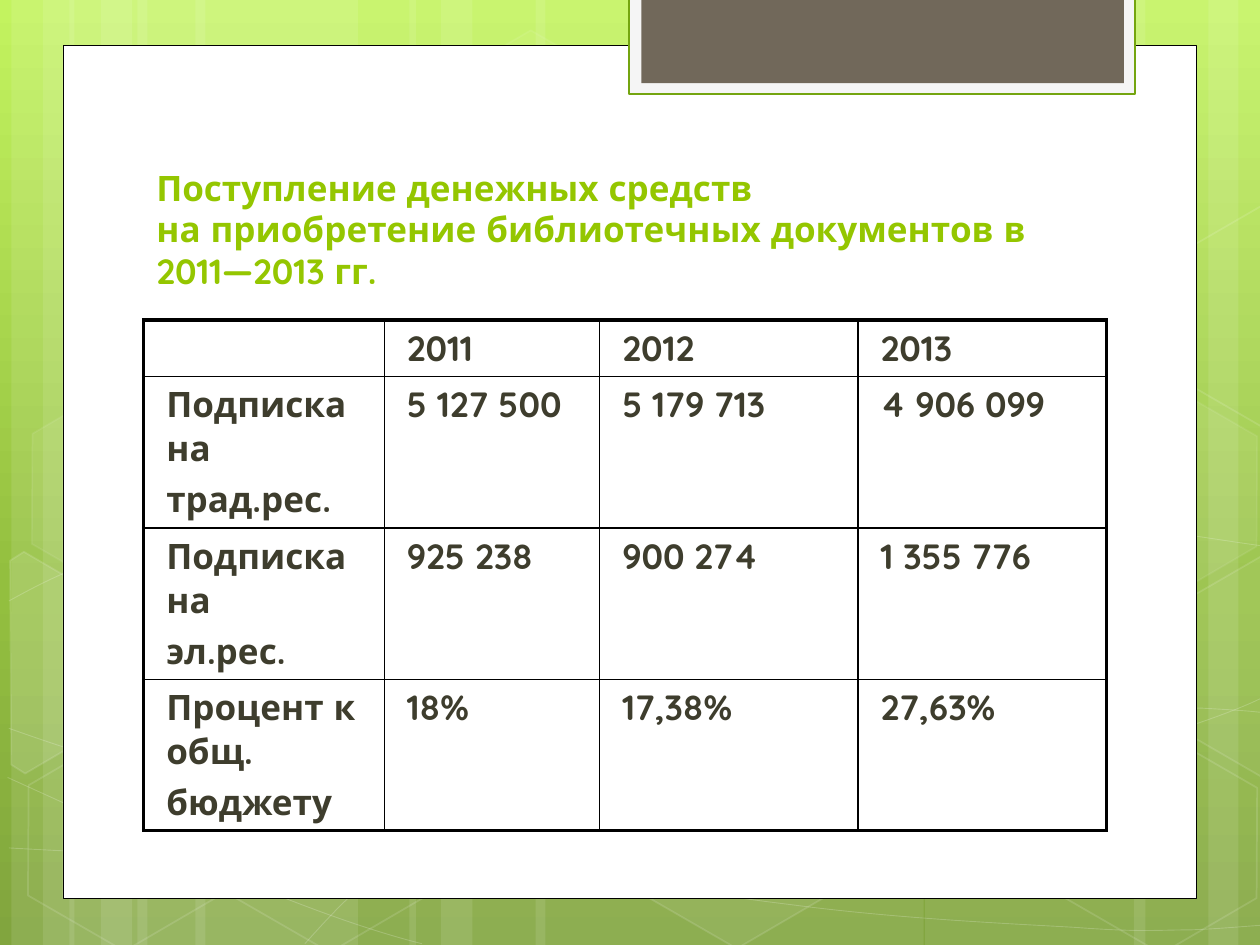
from copy import deepcopy
from dataclasses import dataclass

from lxml import etree
from pptx import Presentation, util as u
from pptx.dml.color import RGBColor
from pptx.enum import shapes, text
from pptx.oxml.ns import qn

COLUMNS, ROWS = 10, 7.5
CELL = u.Inches(10) // COLUMNS
FONT = "Quicksand"
WHITE, BLACK, GREEN, DARK = "FFFFFF", "000000", "94C600", "3E3D2D"
Point = tuple[float, float]


@dataclass
class Block:
    left: float
    top: float
    width: float
    height: float
    fill: str | None = None
    line: str | None = None
    weight: float = 1
    fill_alpha: int = 100
    line_alpha: int = 100
    turn: float = 0


@dataclass
class Hexagon:
    left: float
    top: float
    fill_alpha: int
    line_alpha: int


@dataclass
class Shard:
    points: list[Point]
    fill_alpha: int


BANDS = [(left + shift, width) for shift in (0, 0.46)
         for left, width in ((1.09, 1.75), (0.09, 0.5), (0.34, 0.83))]
BANDS += [(7.34, 1.75), (9.59, 0.5), (9, 0.83), (4.25, 3.08), (3.25, 0.5), (3.5, 0.83)]

CURVES = [
    [(0.07, 6.73), (0.61, 6.76), (1.15, 6.79), (1.9, 6.78), (2.65, 6.77), (3.58, 6.75),
     (4.58, 6.65), (5.58, 6.55), (7, 6.36), (7.92, 6.17), (8.83, 5.98), (9.77, 5.68), (10.07, 5.51)],
    [(0.07, 4.77), (0.36, 4.61), (0.65, 4.46), (1.21, 4.31), (1.78, 4.16), (2.59, 3.94),
     (3.47, 3.87), (4.36, 3.8), (5.44, 3.79), (6.54, 3.87), (7.64, 3.95), (9.47, 4.26), (10.07, 4.34)],
    [(0.06, 6.17), (1.27, 6.72), (2.47, 7.27), (3.35, 7.49)],
    [(0.07, 5.78), (0.38, 5.89), (0.7, 6), (1.28, 6.16), (1.86, 6.31), (2.73, 6.56),
     (3.57, 6.73), (4.4, 6.9), (5.45, 7.08), (6.28, 7.18), (7.11, 7.29), (8, 7.33),
     (8.53, 7.36), (9.06, 7.4), (9.19, 7.38), (9.45, 7.38), (9.71, 7.37), (9.89, 7.35), (10.07, 7.34)],
    [(2.42, 7.49), (2.6, 7.29), (2.78, 7.09), (3.02, 6.91), (3.26, 6.72), (3.6, 6.53),
     (3.88, 6.39), (4.16, 6.25), (4.33, 6.19), (4.69, 6.09), (5.06, 5.99), (5.73, 5.85),
     (6.08, 5.78), (6.44, 5.71), (6.49, 5.71), (6.8, 5.69), (7.11, 5.66), (7.6, 5.63),
     (7.94, 5.62), (8.29, 5.61), (8.86, 5.62), (8.86, 5.62), (8.86, 5.62), (9.53, 5.62),
     (9.53, 5.62), (9.71, 5.63), (9.88, 5.64), (9.97, 5.65), (10.06, 5.66), (10.03, 5.65), (10.06, 5.66)],
]

HEXAGONS = [
    Hexagon(3.34, 0.36, 4, 8), Hexagon(4.97, 5.89, 6, 12), Hexagon(0.11, 5.91, 0, 12),
    Hexagon(0.14, 3.12, 7, 8), Hexagon(1.74, 5.92, 0, 12), Hexagon(7.53, 4.53, 10, 12),
    Hexagon(8.34, 5.93, 0, 12), Hexagon(8.34, 3.14, 7, 8),
]

SHARDS = [
    Shard([(0.08, 4.45), (0.19, 4.38), (0.96, 4.83), (0.95, 5.7), (0.2, 6.14), (0.09, 6.07)], 10),
    Shard([(9.26, 4.85), (10.02, 4.41), (10.09, 4.46), (10.09, 6.13), (10.02, 6.17), (9.26, 5.73)], 4),
    Shard([(9.26, 2.07), (10.02, 1.63), (10.1, 1.68), (10.09, 3.35), (10.02, 3.39), (9.26, 2.95)], 0),
]

PANELS = [
    Block(0.5, 0.36, 9, 6.77, WHITE, BLACK, 0.5),
    Block(4.99, -0.02, 4.02, 0.77, "F5F5F5", "74A510", 1.25),
    Block(5.09, -0.02, 3.83, 0.68, "71685A"),
]

TITLE = "Поступление денежных средств \vна приобретение библиотечных документов в 2011—2013 гг."
BUDGET = [
    ["", "2011", "2012", "2013"],
    ["Подписка на\nтрад.рес.", "5 127 500", "5 179 713", "4 906 099"],
    ["Подписка на\nэл.рес.", "925 238", "900 274", "1 355 776"],
    ["Процент к общ.\nбюджету", "18%", "17,38%", "27,63%"],
]
COLUMN_WIDTHS = [1.91, 1.71, 2.05, 1.97]
ROW_HEIGHTS = [0.43, 0.98, 0.98, 0.92]


def cells(count: float) -> u.Emu:
    return u.Emu(round(count * CELL))


def colour(value: str) -> RGBColor:
    return RGBColor.from_string(value)


def paint(fill, value: str | None, alpha: int = 100) -> None:
    if value is None or alpha == 0:
        fill.background()
        return
    fill.solid()
    fill.fore_color.rgb = colour(value)


def fade(shape, tag: str, alpha: int) -> None:
    owner = shape.element.spPr if tag == "fill" else shape.element.spPr.find(qn("a:ln"))
    tone = owner.find(f"{qn('a:solidFill')}/{qn('a:srgbClr')}")
    if tone is not None and alpha < 100:
        etree.SubElement(tone, qn("a:alpha")).set("val", str(alpha * 1000))


def dress(shape, fill: str | None, line: str | None, weight: float,
          fill_alpha: int = 100, line_alpha: int = 100) -> None:
    shape.shadow.inherit = False
    paint(shape.fill, fill, fill_alpha)
    paint(shape.line.fill, line, line_alpha)
    fade(shape, "fill", fill_alpha)
    if line:
        shape.line.width = u.Pt(weight)
        fade(shape, "line", line_alpha)


def draw_block(page, block: Block, kind=shapes.MSO_SHAPE.RECTANGLE):
    shape = page.shapes.add_shape(kind, *map(cells, (block.left, block.top, block.width, block.height)))
    shape.rotation = block.turn
    dress(shape, block.fill, block.line, block.weight, block.fill_alpha, block.line_alpha)
    return shape


def draw_hexagon(page, item: Hexagon) -> None:
    block = Block(item.left, item.top, 1.75, 1.52, WHITE, WHITE, 1, item.fill_alpha, item.line_alpha, 30)
    draw_block(page, block, shapes.MSO_SHAPE.HEXAGON).adjustments[0] = 0.285


def draw_outline(page, points: list[Point], closed: bool):
    first, *rest = [(cells(x), cells(y)) for x, y in points]
    builder = page.shapes.build_freeform(*first)
    builder.add_line_segments(rest, close=closed)
    return builder.convert_to_shape()


def draw_curve(page, points: list[Point]) -> None:
    shape = draw_outline(page, points, False)
    outline = next(shape.element.iter(qn("a:path")))
    lines = outline.findall(qn("a:lnTo"))
    for start in range(0, len(lines), 3):
        group = lines[start:start + 3]
        for line in group:
            outline.remove(line)
        if points[start] == points[start + 1] and points[start + 2] == points[start + 3]:
            outline.append(group[-1])
        else:
            bend = etree.SubElement(outline, qn("a:cubicBezTo"))
            bend.extend([line[0] for line in group])
    dress(shape, None, WHITE, 0.5, line_alpha=20)


def write(para, words: str, *, tone: str, size: float = 20, before: float = 0,
          spacing: float | None = None, indent: float = 0) -> None:
    para.text = words
    para.alignment = text.PP_ALIGN.LEFT
    para.space_before = u.Pt(before)
    para.line_spacing = spacing
    para._p.get_or_add_pPr().set("marL", str(cells(indent)))
    for span in para.runs:
        span.font.name, span.font.size, span.font.bold = FONT, u.Pt(size), True
        span.font.color.rgb = colour(tone)
    for gap in para._p.findall(qn("a:br")):
        gap.insert(0, deepcopy(para.runs[0].font._rPr))


def set_background(page) -> None:
    fill = page.background.fill
    fill.gradient()
    fill.gradient_angle = 270
    stops = next(page.element.iter(qn("a:gsLst")))
    stops.append(deepcopy(stops[-1]))
    for stop, (place, tone) in zip(fill.gradient_stops, [(0, "C3F35F"), (0.62, "93BF3F"), (1, "81A53E")]):
        stop.position = place
        stop.color.rgb = colour(tone)


def set_borders(cell, weights: dict[str, float]) -> None:
    props = cell._tc.get_or_add_tcPr()
    for index, (side, weight) in enumerate(weights.items()):
        line = etree.Element(qn(f"a:ln{side}"), w=str(u.Pt(weight)))
        tone = etree.SubElement(etree.SubElement(line, qn("a:solidFill")), qn("a:srgbClr"))
        tone.set("val", BLACK)
        props.insert(index, line)


def draw_table(page) -> None:
    last_row, last_column = len(BUDGET) - 1, len(COLUMN_WIDTHS) - 1
    frame = page.shapes.add_table(len(BUDGET), len(COLUMN_WIDTHS), *map(cells, (1.14, 2.54, 7.64, 3.93)))
    table = frame.table
    table.first_row = table.horz_banding = False
    for column, width in zip(table.columns, COLUMN_WIDTHS):
        column.width = cells(width)
    for r, (row, height) in enumerate(zip(table.rows, ROW_HEIGHTS)):
        row.height = cells(height)
        for c, cell in enumerate(row.cells):
            cell.fill.background()
            edges = {"L": c == 0, "R": c == last_column, "T": r == 0, "B": r == last_row}
            set_borders(cell, {side: 2.25 if outer else 1 for side, outer in edges.items()})
            for index, words in enumerate(BUDGET[r][c].split("\n")):
                para = cell.text_frame.add_paragraph() if index else cell.text_frame.paragraphs[0]
                write(para, words, tone=DARK, before=4, indent=0.08)
    frame.height = cells(3.93)


def place_title(page) -> None:
    title = page.shapes.title
    title.element.getparent().append(title.element)
    title.left, title.top, title.width, title.height = map(cells, (1.14, 1.12, 7.68, 1.25))
    box = title.text_frame
    box.word_wrap, box.auto_size = True, text.MSO_AUTO_SIZE.NONE
    box.vertical_anchor = text.MSO_ANCHOR.BOTTOM
    write(box.paragraphs[0], TITLE, tone=GREEN, spacing=0.98)


def main() -> None:
    deck = Presentation()
    deck.slide_width, deck.slide_height = cells(COLUMNS), cells(ROWS)
    page = deck.slides.add_slide(deck.slide_layouts[5])
    set_background(page)
    for left, width in BANDS:
        draw_block(page, Block(left, 0, width, ROWS, WHITE, fill_alpha=10))
    for curve in CURVES:
        draw_curve(page, curve)
    for item in HEXAGONS:
        draw_hexagon(page, item)
    for shard in SHARDS:
        dress(draw_outline(page, shard.points, True), WHITE, WHITE, 1, shard.fill_alpha, 12)
    for panel in PANELS:
        draw_block(page, panel)
    place_title(page)
    draw_table(page)
    deck.save("out.pptx")


if __name__ == "__main__":
    main()
